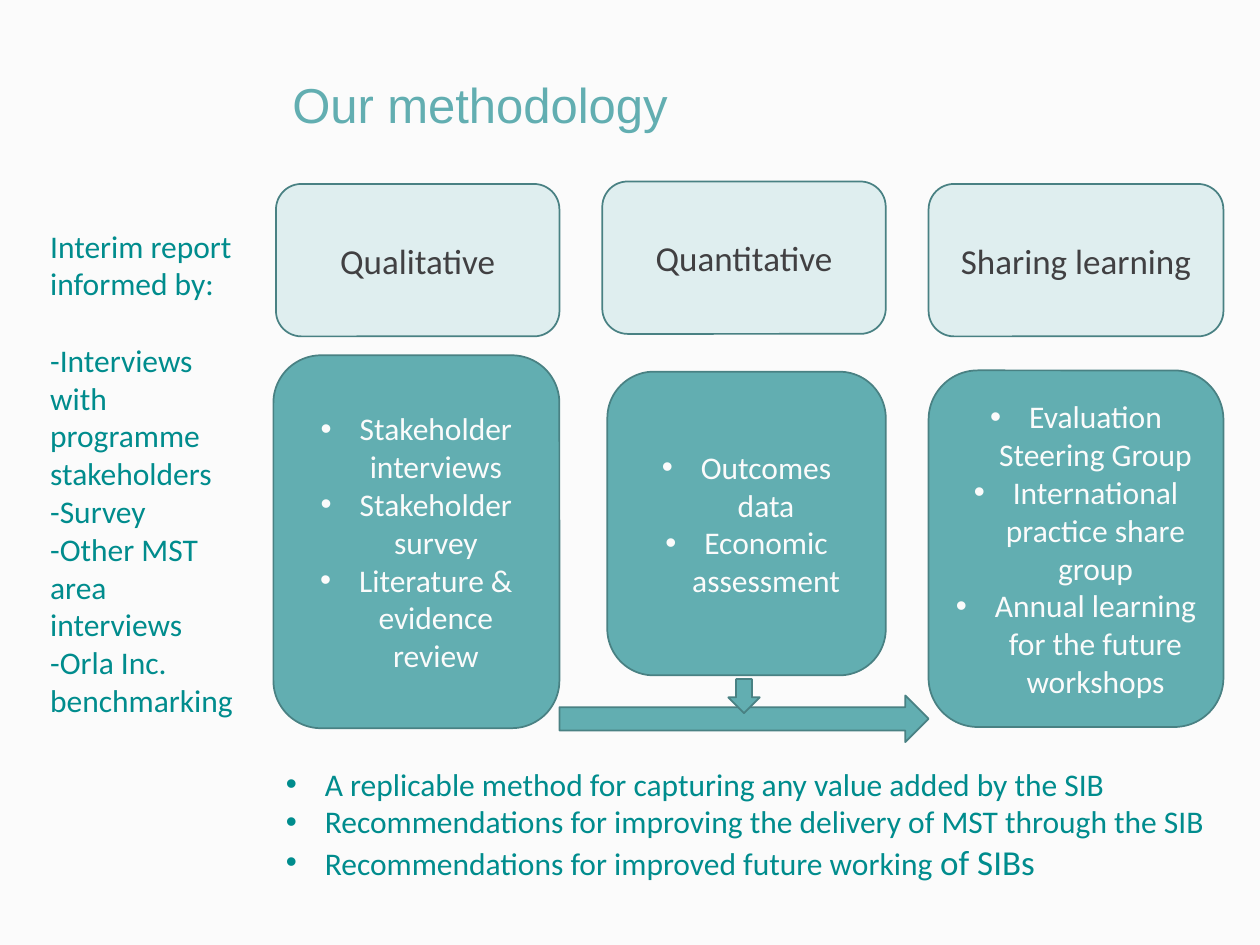
"""Build the methodology slide: three themed columns, arrows and notes."""
from lxml.etree import SubElement as Sub
from pptx import Presentation
from pptx.dml.color import RGBColor as RGB
from pptx.enum.shapes import MSO_SHAPE as Kind
from pptx.enum.text import MSO_ANCHOR as Anchor, PP_ALIGN as Align
from pptx.oxml.ns import qn
from pptx.util import Inches, Pt

PAPER = RGB(0xFB, 0xFB, 0xFB)
PALE = RGB(0xDF, 0xEE, 0xEF)
TEAL = RGB(0x62, 0xAE, 0xB1)
EDGE = RGB(0x49, 0x81, 0x83)
DEEP = RGB(0x00, 0x8C, 0x8D)
GREY = RGB(0x41, 0x40, 0x42)

TITLE = {"name": "Arial", "size": Pt(28), "color": TEAL}
HEAD = {"name": "Calibri", "size": Pt(20), "color": GREY}
BODY = {"name": "Calibri", "size": Pt(18), "color": PAPER}
NOTE = {**BODY, "color": DEEP}
LARGE = {**NOTE, "size": Pt(20)}

HEADS = [
    ("Qualitative", (2.19, 1.46, 2.25, 1.21)),
    ("Sharing learning", (7.37, 1.46, 2.34, 1.21)),
    ("Quantitative", (4.78, 1.44, 2.25, 1.21)),
]
CARDS = [
    (["Stakeholder interviews", "Stakeholder survey",
      "Literature & evidence review"], (2.17, 2.82, 2.27, 2.96)),
    (["Evaluation Steering Group", "International practice share group",
      "Annual learning for the future workshops"], (7.37, 2.94, 2.34, 2.83)),
    (["Outcomes data", "Economic assessment"], (4.82, 2.95, 2.21, 2.41)),
]
ARROWS = [
    (Kind.RIGHT_ARROW, (4.44, 5.52, 2.93, 0.37)),
    (Kind.DOWN_ARROW, (5.78, 5.39, 0.25, 0.27)),
]
GOALS = [
    "A replicable method for capturing any value added by the SIB",
    "Recommendations for improving the delivery of MST through the SIB",
    "Recommendations for improved future working ",
]
INPUTS = [
    "Interim report informed by:",
    "-Interviews with programme stakeholders",
    "-Survey",
    "-Other MST area interviews",
    "-Orla Inc. benchmarking",
]


def add_run(para, text, style):
    """Add a run whose font follows the style."""
    run = para.add_run()
    run.text = text
    for key, value in style.items():
        if key == "color":
            run.font.color.rgb = value
        else:
            setattr(run.font, key, value)


def add_bullet(para):
    """Give the paragraph a round bullet and a hanging indent."""
    props = para._p.get_or_add_pPr()
    props.set("marL", str(Inches(0.31)))
    props.set("indent", str(Inches(-0.31)))
    Sub(props, qn("a:buFont"), typeface="Arial")
    Sub(props, qn("a:buChar"), char="•")


def fill_text(shape, lines, style, align=Align.LEFT, bullet=False):
    """Write one paragraph per line and return the text frame."""
    frame = shape.text_frame
    frame.word_wrap = True
    for i, line in enumerate(lines):
        para = frame.add_paragraph() if i else frame.paragraphs[0]
        para.alignment = align
        if bullet:
            add_bullet(para)
        add_run(para, line, style)
    return frame


def add_block(slide, kind, box, fill):
    """Add an outlined preset shape."""
    shape = slide.shapes.add_shape(kind, *map(Inches, box))
    shape.shadow.inherit = False
    shape.fill.solid()
    shape.fill.fore_color.rgb = fill
    shape.line.color.rgb = EDGE
    shape.line.width = Pt(1)
    return shape


def add_card(slide, box, fill, lines, style, bullet=False):
    """Add a rounded card with centred text."""
    card = add_block(slide, Kind.ROUNDED_RECTANGLE, box, fill)
    frame = fill_text(card, lines, style, Align.CENTER, bullet)
    frame.vertical_anchor = Anchor.MIDDLE


def add_note(slide, box, lines, style, bullet=False):
    """Add a text box and return its text frame."""
    shape = slide.shapes.add_textbox(*map(Inches, box))
    return fill_text(shape, lines, style, bullet=bullet)


def main():
    """Build and save the slide."""
    deck = Presentation()
    deck.slide_width, deck.slide_height = Inches(10), Inches(7.5)
    slide = deck.slides.add_slide(deck.slide_layouts[6])
    slide.background.fill.solid()
    slide.background.fill.fore_color.rgb = PAPER

    title = add_note(slide, (2.09, 0.54, 7.6, 6.49), ["Our methodology"], TITLE)
    title.margin_left = Inches(0.23)
    for text, box in HEADS:
        add_card(slide, box, PALE, [text], HEAD)
    for lines, box in CARDS:
        add_card(slide, box, TEAL, lines, BODY, bullet=True)
    for kind, box in ARROWS:
        add_block(slide, kind, box, TEAL)

    goals = add_note(slide, (2.17, 6.02, 7.62, 1.04), GOALS, NOTE, bullet=True)
    add_run(goals.paragraphs[-1], "of SIBs", LARGE)
    inputs = add_note(slide, (0.3, 1.75, 1.7, 4.04), INPUTS, NOTE)
    inputs.paragraphs[1].space_before = Pt(22)
    deck.save("out.pptx")


if __name__ == "__main__":
    main()
